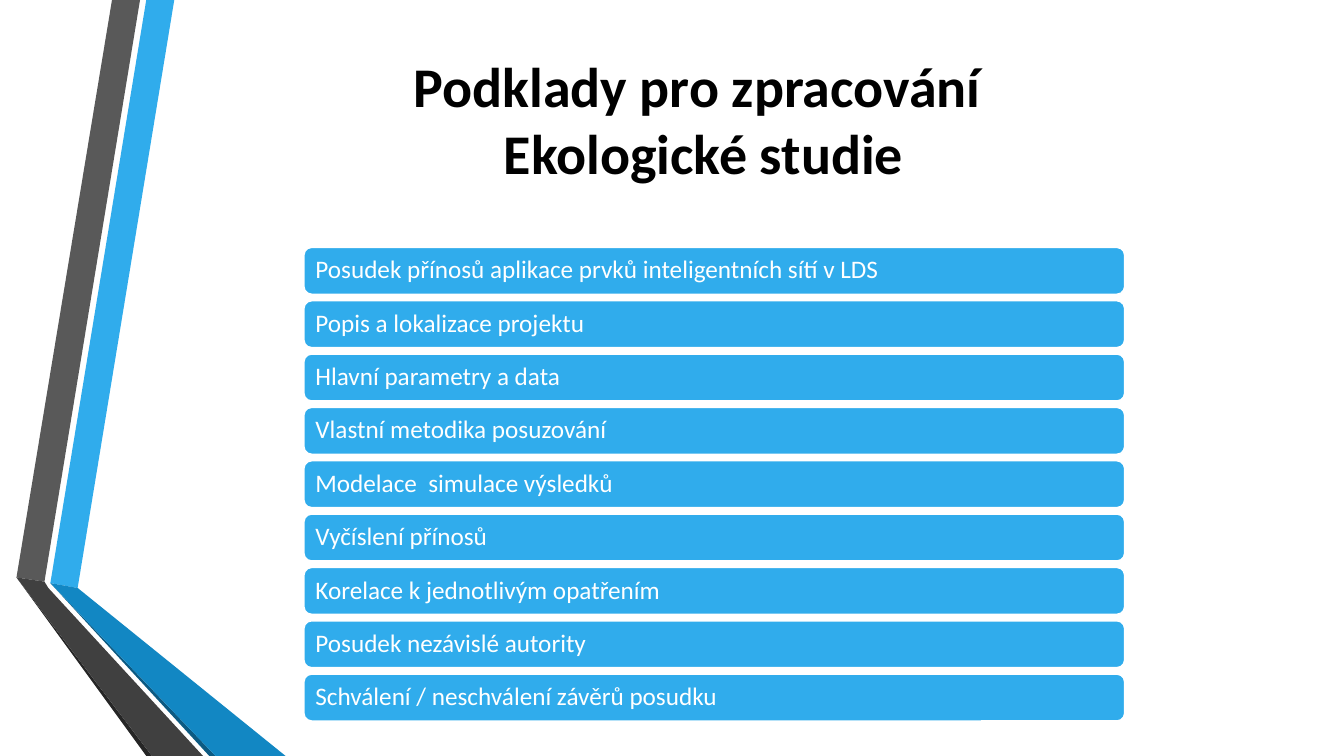
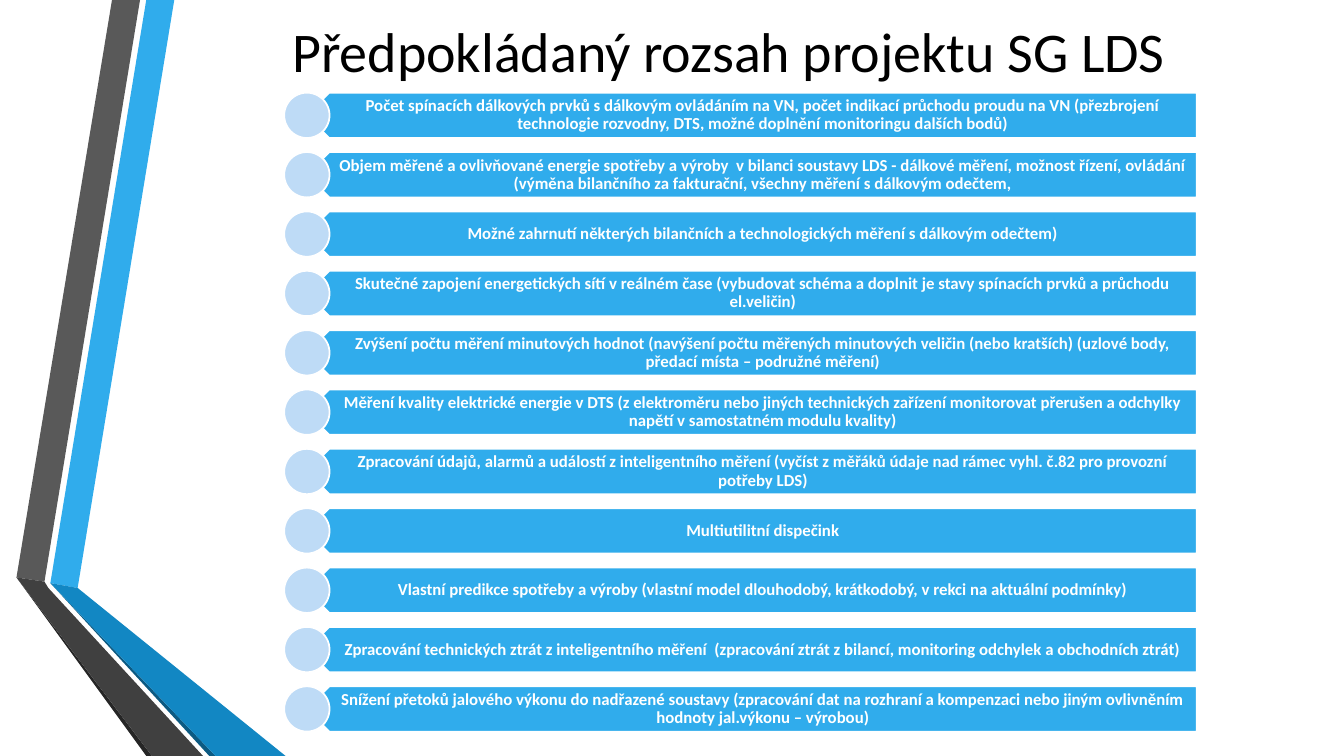
from dataclasses import dataclass

from pptx import Presentation
from pptx.dml.color import RGBColor
from pptx.enum.shapes import MSO_SHAPE as Shape
from pptx.enum.text import MSO_ANCHOR as Anchor, PP_ALIGN as Align
from pptx.util import Pt


@dataclass(frozen=True)
class Theme:
    font: str = "Calibri"
    title_size: float = 40
    bar_size: float = 18
    arrow_size: float = 12
    outline: float = 1.25
    black: str = "000000"
    white: str = "FFFFFF"
    blue: str = "30ACEC"
    mid_blue: str = "1287C3"
    deep_blue: str = "0C5A82"
    pale_blue: str = "BEDBF6"
    gray: str = "595959"
    dark_gray: str = "404040"
    deep_gray: str = "262626"


THEME = Theme()

# Ribbon facets on the left edge, back to front: colour and corners in points
RIBBON = [
    (THEME.blue, [(36, 416.5), (55.5, 420), (124.5, 0), (104.5, 0)]),
    (THEME.gray, [(100, 0), (80, 0), (11.75, 412.5), (31.75, 415.5)]),
    (THEME.deep_gray, [(11.75, 412.5), (104.5, 540), (108.5, 540)]),
    (THEME.deep_blue, [(36, 416.5), (149.5, 540), (154, 540)]),
    (THEME.mid_blue, [(36, 416.5), (154, 540), (204, 540), (55.5, 420)]),
    (THEME.dark_gray, [(145, 540), (34.5, 420), (31.75, 415.5), (11.75, 412.5), (108.5, 540)]),
]


class Slides:
    """Holds the deck, its style and the current page."""

    def __init__(self, theme):
        self.theme = theme
        self.deck = Presentation()
        self.deck.slide_width, self.deck.slide_height = Pt(960), Pt(540)
        self.page = None

    def new_page(self):
        self.page = self.deck.slides.add_slide(self.deck.slide_layouts[6])
        for color, corners in RIBBON:
            self.facet(color, corners)

    def paint(self, shape, color, outlined=True):
        shape.shadow.inherit = False
        shape.fill.solid()
        shape.fill.fore_color.rgb = RGBColor.from_string(color)
        if outlined:
            shape.line.color.rgb = RGBColor.from_string(self.theme.white)
            shape.line.width = Pt(self.theme.outline)
        else:
            shape.line.fill.background()

    def facet(self, color, corners):
        points = [(Pt(x), Pt(y)) for x, y in corners]
        builder = self.page.shapes.build_freeform(*points[0])
        builder.add_line_segments(points[1:], close=True)
        self.paint(builder.convert_to_shape(), color, outlined=False)

    def shape(self, kind, color, *area):
        shape = self.page.shapes.add_shape(kind, *map(Pt, area))
        self.paint(shape, color)
        return shape

    def textbox(self, *area):
        return self.page.shapes.add_textbox(*map(Pt, area))

    def add_text(self, box, lines, size, color, bold=False, align=Align.CENTER,
                 spacing=1.0, insets=(7.2, 3.6, 7.2, 3.6)):
        frame = box.text_frame
        frame.word_wrap = True
        frame.vertical_anchor = Anchor.MIDDLE
        (frame.margin_left, frame.margin_top,
         frame.margin_right, frame.margin_bottom) = map(Pt, insets)
        para = frame.paragraphs[0]
        para.alignment = align
        para.line_spacing = spacing
        for index, line in enumerate(lines):
            if index:
                para.add_line_break()
            span = para.add_run()
            span.text = line
            span.font.name = self.theme.font
            span.font.size = Pt(size)
            span.font.bold = bold
            span.font.color.rgb = RGBColor.from_string(color)

    def title(self, lines, left, top, bold=False):
        box = self.textbox(left, top, 789, 138)
        self.add_text(box, lines, self.theme.title_size, self.theme.black, bold)

    def bar(self, text, top):
        bar = self.shape(Shape.ROUNDED_RECTANGLE, self.theme.blue, 217, top, 586.5, 33.7)
        self.add_text(bar, [text], self.theme.bar_size, self.theme.white,
                      align=Align.LEFT, spacing=0.9, insets=(6.7, 5, 6.7, 5))

    def arrow(self, text, top, height=32.4):
        # The arrow is turned to point left, so its upright text has its own box
        arrow = self.shape(Shape.PENTAGON, self.theme.blue, 219, top, 635.8, height)
        arrow.rotation = 180
        box = self.textbox(227.2, top, 627.8, height)
        self.add_text(box, [text], self.theme.arrow_size, self.theme.white, bold=True,
                      spacing=0.9, insets=(14.3, 3.6, 6.7, 3.6))
        self.shape(Shape.OVAL, self.theme.pale_blue, 203, top, height, height)


STUDY_INPUTS = [
    "Posudek přínosů aplikace prvků inteligentních sítí v LDS",
    "Popis a lokalizace projektu",
    "Hlavní parametry a data",
    "Vlastní metodika posuzování",
    "Modelace  simulace výsledků",
    "Vyčíslení přínosů",
    "Korelace k jednotlivým opatřením",
    "Posudek nezávislé autority",
    "Schválení / neschválení závěrů posudku",
]

PROJECT_SCOPE = [
    "Počet spínacích dálkových prvků s dálkovým ovládáním na VN, počet indikací průchodu "
    "proudu na VN (přezbrojení technologie rozvodny, DTS, možné doplnění monitoringu dalších bodů)",
    "Objem měřené a ovlivňované energie spotřeby a výroby  v bilanci soustavy LDS - dálkové "
    "měření, možnost řízení, ovládání (výměna bilančního za fakturační, všechny měření "
    "s dálkovým odečtem,",
    "Možné zahrnutí některých bilančních a technologických měření s dálkovým odečtem)",
    "Skutečné zapojení energetických sítí v reálném čase (vybudovat schéma a doplnit je stavy "
    "spínacích prvků a průchodu el.veličin)",
    "Zvýšení počtu měření minutových hodnot (navýšení počtu měřených minutových veličin "
    "(nebo kratších) (uzlové body, předací místa – podružné měření)",
    "Měření kvality elektrické energie v DTS (z elektroměru nebo jiných technických zařízení "
    "monitorovat přerušen a odchylky napětí v samostatném modulu kvality)",
    "Zpracování údajů, alarmů a událostí z inteligentního měření (vyčíst z měřáků údaje "
    "nad rámec vyhl. č.82 pro provozní potřeby LDS)",
    "Multiutilitní dispečink",
    "Vlastní predikce spotřeby a výroby (vlastní model dlouhodobý, krátkodobý, v rekci "
    "na aktuální podmínky)",
    "Zpracování technických ztrát z inteligentního měření  (zpracování ztrát z bilancí, "
    "monitoring odchylek a obchodních ztrát)",
    "Snížení přetoků jalového výkonu do nadřazené soustavy (zpracování dat na rozhraní "
    "a kompenzaci nebo jiným ovlivněním hodnoty jal.výkonu – výrobou)",
]


def main():
    slides = Slides(THEME)

    # Inputs for the ecological study
    slides.new_page()
    slides.title(["Podklady pro zpracování ", "Ekologické studie"], 108, 16, bold=True)
    for row, text in enumerate(STUDY_INPUTS):
        slides.bar(text, 176.6 + row * 38.1)

    # Expected project scope
    slides.new_page()
    slides.title(["Předpokládaný rozsah projektu SG LDS"], 126, -33)
    for row, text in enumerate(PROJECT_SCOPE):
        slides.arrow(text, 66.2 + row * 42.4)

    slides.deck.save("out.pptx")


if __name__ == "__main__":
    main()
